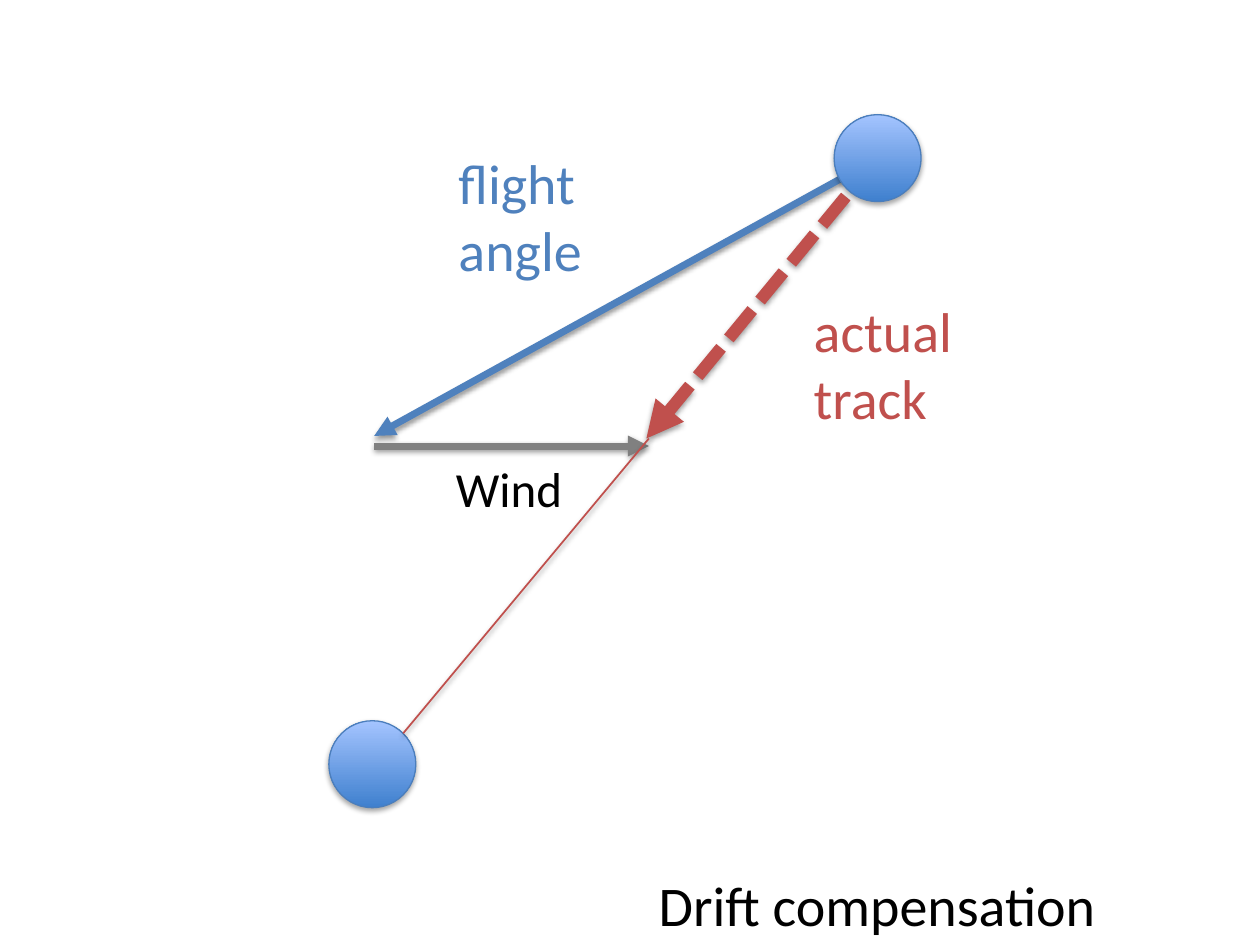
from typing import NamedTuple, Optional

from pptx import Presentation
from pptx.dml.color import RGBColor
from pptx.enum import dml, shapes, text
from pptx.oxml import parse_xml
from pptx.oxml.ns import nsdecls
from pptx.util import Inches, Pt

BLACK = RGBColor(0x00, 0x00, 0x00)
BLUE = RGBColor(0x4F, 0x81, 0xBD)
RED = RGBColor(0xC0, 0x50, 0x4D)
GRAY = RGBColor(0x80, 0x80, 0x80)
BALL_LINE = RGBColor(0x4B, 0x7E, 0xBC)
BALL_DARK = RGBColor(0x3F, 0x80, 0xCE)
BALL_LIGHT = RGBColor(0xA4, 0xC4, 0xFF)
BALL_SIZE = 0.69


class Label(NamedTuple):
    words: str
    box: tuple[float, float, float, float]
    color: RGBColor = BLACK
    size: int = 32


class Ray(NamedTuple):
    start: tuple[float, float]
    end: tuple[float, float]
    color: RGBColor
    width: float
    arrow: bool = True
    dash: Optional[dml.MSO_LINE_DASH_STYLE] = None


class Ball(NamedTuple):
    left: float
    top: float


def add_shadow(sp, distance: float, alpha: int) -> None:
    sp._element.spPr.append(parse_xml(
        f'<a:effectLst {nsdecls("a")}>'
        f'<a:outerShdw blurRad="{Pt(3.1)}" dist="{Pt(distance)}" dir="5400000" rotWithShape="0">'
        f'<a:srgbClr val="000000"><a:alpha val="{alpha * 1000}"/></a:srgbClr>'
        '</a:outerShdw></a:effectLst>'))


def draw_label(s, label: Label) -> None:
    tf = s.shapes.add_textbox(*map(Inches, label.box)).text_frame
    frame_format = {"word_wrap": False, "auto_size": text.MSO_AUTO_SIZE.SHAPE_TO_FIT_TEXT}
    for name, value in frame_format.items():
        setattr(tf, name, value)
    tf.text = label.words
    font_format = {"name": "Calibri", "size": Pt(label.size)}
    for p in tf.paragraphs:
        for r in p.runs:
            for name, value in font_format.items():
                setattr(r.font, name, value)
            r.font.color.rgb = label.color


def draw_ray(s, ray: Ray) -> None:
    sp = s.shapes.add_connector(
        shapes.MSO_CONNECTOR.STRAIGHT, *map(Inches, ray.start + ray.end))
    sp.line.color.rgb = ray.color
    sp.line.width = Pt(ray.width)
    if ray.dash is not None:
        sp.line.dash_style = ray.dash
    if ray.arrow:
        sp.line._get_or_add_ln().append(
            parse_xml(f'<a:tailEnd {nsdecls("a")} type="triangle"/>'))
    add_shadow(sp, 1.6, 38)


def draw_ball(s, ball: Ball) -> None:
    sp = s.shapes.add_shape(
        shapes.MSO_SHAPE.OVAL, *map(Inches, (*ball, BALL_SIZE, BALL_SIZE)))
    sp.fill.gradient()
    sp.fill.gradient_angle = 90
    for stop, color in zip(sp.fill.gradient_stops, (BALL_DARK, BALL_LIGHT)):
        stop.color.rgb = color
    sp.line.color.rgb = BALL_LINE
    sp.line.width = Pt(0.75)
    add_shadow(sp, 1.8, 35)


def main() -> None:
    prs = Presentation()
    prs.slide_width, prs.slide_height = Inches(10), Inches(7.5)
    s = prs.slides.add_slide(prs.slide_layouts[6])

    origin, heading_tip, track_tip = (6.96, 1.26), (2.97, 3.46), (5.13, 3.48)

    draw_label(s, Label("Drift compensation", (5.13, 6.86, 3.7, 0.64)))
    draw_ray(s, Ray(origin, track_tip, RED, 7, dash=dml.MSO_LINE.SQUARE_DOT))
    draw_ball(s, Ball(2.61, 5.72))
    draw_ray(s, Ray(origin, heading_tip, BLUE, 4))
    draw_ray(s, Ray((2.97, 3.54), (5.15, 3.54), GRAY, 4))
    for label in (
        Label("Wind", (3.52, 3.59, 1.05, 0.57), size=28),
        Label("flight\nangle", (3.54, 1.13, 1.21, 1.18), BLUE),
        Label("actual\ntrack", (6.36, 2.3, 1.31, 1.18), RED),
    ):
        draw_label(s, label)
    draw_ball(s, Ball(6.62, 0.91))
    draw_ray(s, Ray((5.15, 3.48), (3.2, 5.82), RED, 1, arrow=False))

    prs.save("out.pptx")


if __name__ == "__main__":
    main()
